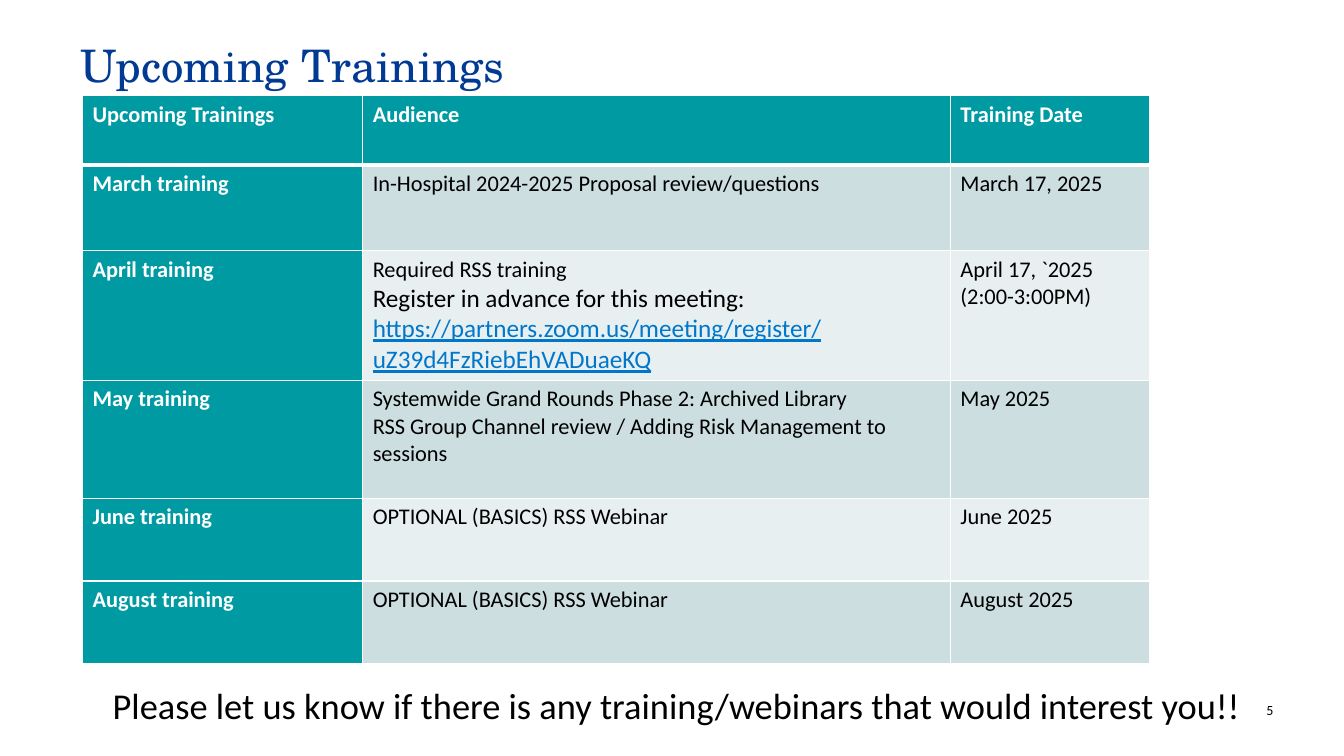
from dataclasses import dataclass

import pptx
import pptx.dml.color
import pptx.enum.text
import pptx.oxml
import pptx.oxml.ns
import pptx.util

Cm = pptx.util.Cm
Pt = pptx.util.Pt
Align = pptx.enum.text.PP_ALIGN


@dataclass(frozen=True)
class Theme:
    body_font: str = "Calibri"
    title_font: str = "TeX Gyre Schola"
    title_color: str = "003A93"
    text: str = "000000"
    white: str = "FFFFFF"
    teal: str = "009AA3"
    bands: tuple = ("CCDEE0", "E7EFF0")
    link: str = "0077CA"
    title_size: int = 32
    note_size: int = 26
    register_size: int = 18
    cell_size: int = 16
    number_size: int = 10
    thin_border: int = 1
    header_border: int = 3


THEME = Theme()

HEADER = ("Upcoming Trainings", "Audience", "Training Date")
TRAININGS = (
    ("March training", "In-Hospital 2024-2025 Proposal review/questions", "March 17, 2025"),
    (
        "April training",
        "Required RSS training\nRegister in advance for this meeting:\n"
        "https://partners.zoom.us/meeting/register/uZ39d4FzRiebEhVADuaeKQ",
        "April 17, `2025 (2:00-3:00PM)",
    ),
    (
        "May training",
        "Systemwide Grand Rounds Phase 2: Archived Library\n"
        "RSS Group Channel review / Adding Risk Management to sessions",
        "May 2025",
    ),
    ("June training", "OPTIONAL (BASICS) RSS Webinar", "June 2025"),
    ("August training", "OPTIONAL (BASICS) RSS Webinar", "August 2025"),
)
COLUMN_WIDTHS = (7.06, 14.81, 5.03)
ROW_HEIGHTS = (1.75, 2.16, 3.23, 2.97, 2.08, 2.08)
APRIL_ROW = 2


def rgb(color):
    return pptx.dml.color.RGBColor.from_string(color)


def format_paragraph(paragraph, size, color, font=THEME.body_font, bold=False, underline=False):
    for run in paragraph.runs:
        run.font.name = font
        run.font.size = Pt(size)
        run.font.color.rgb = rgb(color)
        run.font.bold = bold
        run.font.underline = underline


def add_title(slide, text):
    title = slide.shapes.title
    title.left, title.top, title.width, title.height = Cm(1.78), Cm(0.97), Cm(30.28), Cm(2.67)
    frame = title.text_frame
    frame.text = text
    frame.auto_size = pptx.enum.text.MSO_AUTO_SIZE.NONE
    frame.vertical_anchor = pptx.enum.text.MSO_ANCHOR.TOP
    paragraph = frame.paragraphs[0]
    paragraph.alignment = Align.LEFT
    paragraph.line_spacing = 0.9
    format_paragraph(paragraph, THEME.title_size, THEME.title_color, THEME.title_font)


def add_text(slide, text, left, top, width, height, size, alignment=Align.LEFT):
    frame = slide.shapes.add_textbox(Cm(left), Cm(top), Cm(width), Cm(height)).text_frame
    frame.word_wrap = True
    frame.text = text
    frame.paragraphs[0].alignment = alignment
    format_paragraph(frame.paragraphs[0], size, THEME.text)
    return frame


def set_borders(cell, **widths):
    """Draw white cell borders; widths in points, keyed L, R, T, B in that order."""
    properties = cell._tc.get_or_add_tcPr()
    for side, width in widths.items():
        properties.append(pptx.oxml.parse_xml(
            f'<a:ln{side} {pptx.oxml.ns.nsdecls("a")} w="{Pt(width)}"><a:solidFill>'
            f'<a:srgbClr val="{THEME.white}"/></a:solidFill></a:ln{side}>'
        ))


def fill_cell(cell, text, row, column):
    is_heading = row == 0 or column == 0
    thin, thick = THEME.thin_border, THEME.header_border
    set_borders(cell, L=thin, R=thin, T=thick if row == 1 else thin, B=thick if row == 0 else thin)
    cell.fill.solid()
    cell.fill.fore_color.rgb = rgb(THEME.teal if is_heading else THEME.bands[(row - 1) % 2])
    cell.text_frame.text = text
    for paragraph in cell.text_frame.paragraphs:
        format_paragraph(
            paragraph, THEME.cell_size, THEME.white if is_heading else THEME.text, bold=is_heading
        )


def add_schedule(slide):
    rows = (HEADER, *TRAININGS)
    schedule = slide.shapes.add_table(
        len(rows), len(HEADER), Cm(2.08), Cm(2.41), Cm(sum(COLUMN_WIDTHS)), Cm(sum(ROW_HEIGHTS))
    ).table
    schedule.first_col = True
    for column, width in zip(schedule.columns, COLUMN_WIDTHS):
        column.width = Cm(width)
    for row, height in zip(schedule.rows, ROW_HEIGHTS):
        row.height = Cm(height)
    for row, texts in enumerate(rows):
        for column, text in enumerate(texts):
            fill_cell(schedule.cell(row, column), text, row, column)

    invitation, address = schedule.cell(APRIL_ROW, 1).text_frame.paragraphs[1:]
    format_paragraph(invitation, THEME.register_size, THEME.text)
    format_paragraph(address, THEME.register_size, THEME.link, underline=True)


def main():
    presentation = pptx.Presentation()
    presentation.slide_width, presentation.slide_height = Cm(33.87), Cm(19.05)
    slide = presentation.slides.add_slide(presentation.slide_layouts.get_by_name("Title Only"))

    add_title(slide, "Upcoming Trainings")
    add_schedule(slide)
    add_text(
        slide,
        "Please let us know if there is any training/webinars that would interest you!!",
        2.59, 17.09, 30.28, 1.37, THEME.note_size,
    )
    number = add_text(slide, "5", 31.12, 17.68, 0.97, 0.43, THEME.number_size, Align.RIGHT)
    number.margin_left = number.margin_right = number.margin_top = number.margin_bottom = 0

    presentation.save("out.pptx")


if __name__ == "__main__":
    main()
